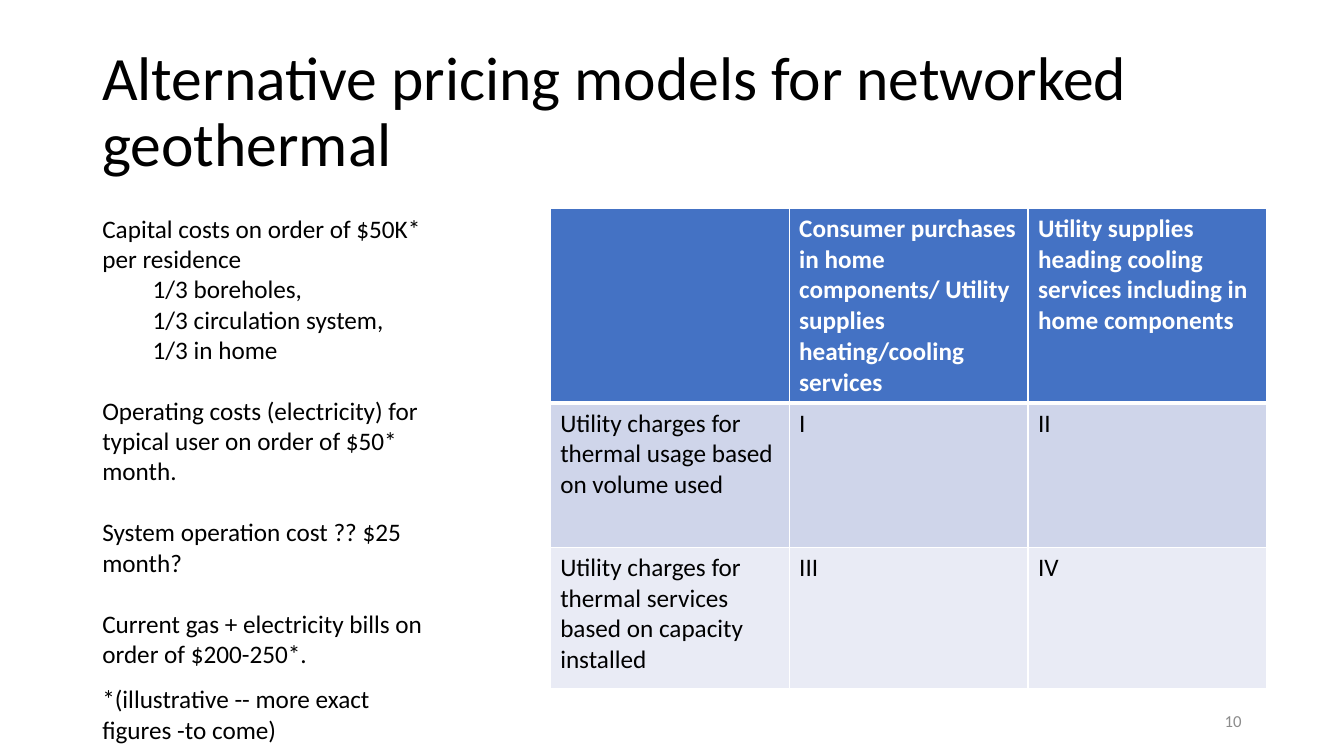
from dataclasses import dataclass

from lxml.etree import SubElement
from pptx import Presentation
from pptx.dml.color import RGBColor
from pptx.enum.text import MSO_ANCHOR as Anchor, PP_ALIGN as Align
from pptx.oxml.ns import qn
from pptx.util import Emu, Pt

COLUMNS, ROWS = 160, 90
MODULE = 76200
FONT = "Calibri"
BLACK, WHITE, GREY = "000000", "FFFFFF", "8C8C8C"
ROW_FILLS = ("4472C4", "CFD5EA", "E9EBF5")
ROW_HEIGHTS = (22, 17.2, 16.8)
COLUMN_WIDTH = 28.45
THIN, THICK = 1, 3
BLANK_LINE = 22


@dataclass(frozen=True)
class Line:
    """One paragraph, with its indent in columns and space before in points."""
    text: str
    indent: float = 0
    before: float = 0


@dataclass(frozen=True)
class TextBlock:
    """A text box placed on the slide grid."""
    left: float
    top: float
    width: float
    height: float
    lines: tuple[Line, ...]
    size: float = 18
    color: str = BLACK
    anchor: Anchor = Anchor.TOP
    align: Align = Align.LEFT
    spacing: float = 1.0


TEXT_BLOCKS = (
    TextBlock(11, 4.8, 138, 17.4,
              (Line("Alternative pricing models for networked geothermal"),),
              size=44, anchor=Anchor.MIDDLE, spacing=0.9),
    TextBlock(11, 24.8, 43.8, 55.7, (
        Line("Capital costs on order of $50K* per residence"),
        Line("1/3 boreholes,", indent=6),
        Line("1/3 circulation system,", indent=6),
        Line("1/3 in home", indent=6),
        Line("Operating costs (electricity) for typical user on order of $50* month.",
             before=BLANK_LINE),
        Line("System operation cost ?? $25 month?", before=BLANK_LINE),
        Line("Current gas + electricity bills on order of $200-250*.", before=BLANK_LINE),
    )),
    TextBlock(11, 80.8, 40.9, 8.5,
              (Line("*(illustrative -- more exact figures -to come)"),)),
    TextBlock(113, 83.4, 36, 4.8, (Line("10"),), size=12, color=GREY,
              anchor=Anchor.MIDDLE, align=Align.RIGHT),
)

PRICING_MODELS = (
    ((),
     ("Consumer purchases in home components/ Utility supplies heating/cooling services",),
     ("Utility supplies heading cooling services including in home components",)),
    (("Utility charges for thermal usage based on volume used",), ("I",), ("II",)),
    (("Utility charges for thermal services based on capacity", "installed"),
     ("III",), ("IV",)),
)


def grid(count: float) -> Emu:
    """Turn a count of grid modules into a length."""
    return Emu(round(count * MODULE))


def rgb(color: str) -> RGBColor:
    """Turn a hex string into a colour."""
    return RGBColor.from_string(color)


def add_span(para, text: str, size: float, color: str, bold: bool = False) -> None:
    """Add one formatted run to a paragraph."""
    span = para.add_run()
    span.text = text
    span.font.name = FONT
    span.font.size = Pt(size)
    span.font.bold = bold
    span.font.color.rgb = rgb(color)


def next_para(frame, index: int):
    """Return the first paragraph of a frame, or a new one after it."""
    return frame.add_paragraph() if index else frame.paragraphs[0]


def draw_text(page, block: TextBlock) -> None:
    """Draw a text block on the page."""
    box = page.shapes.add_textbox(grid(block.left), grid(block.top),
                                  grid(block.width), grid(block.height))
    frame = box.text_frame
    frame.word_wrap = True
    frame.vertical_anchor = block.anchor
    for index, line in enumerate(block.lines):
        para = next_para(frame, index)
        para.alignment = block.align
        para.line_spacing = block.spacing
        para.space_before = Pt(line.before)
        if line.indent:
            para.level = 1
            properties = para._p.get_or_add_pPr()
            properties.set("marL", str(grid(line.indent)))
            properties.set("indent", "0")
        add_span(para, line.text, block.size, block.color)


def draw_borders(cell, top: float, bottom: float) -> None:
    """Give a cell white borders, placed ahead of its fill."""
    properties = cell._tc.get_or_add_tcPr()
    sides = {"a:lnL": THIN, "a:lnR": THIN, "a:lnT": top, "a:lnB": bottom}
    for index, (tag, width) in enumerate(sides.items()):
        border = SubElement(properties, qn(tag), w=str(Pt(width)))
        fill = SubElement(border, qn("a:solidFill"))
        SubElement(fill, qn("a:srgbClr"), val=WHITE)
        properties.insert(index, border)


def draw_table(page) -> None:
    """Draw the matrix of pricing models."""
    count = len(PRICING_MODELS[0])
    table = page.shapes.add_table(
        len(PRICING_MODELS), count, grid(65.5), grid(24.8),
        grid(COLUMN_WIDTH * count), grid(sum(ROW_HEIGHTS))).table
    table.horz_banding = False
    for column in table.columns:
        column.width = grid(COLUMN_WIDTH)
    for row, texts in enumerate(PRICING_MODELS):
        table.rows[row].height = grid(ROW_HEIGHTS[row])
        header = row == 0
        for column, paragraphs in enumerate(texts):
            cell = table.cell(row, column)
            cell.fill.solid()
            cell.fill.fore_color.rgb = rgb(ROW_FILLS[row])
            draw_borders(cell, THICK if row == 1 else THIN, THICK if header else THIN)
            for index, text in enumerate(paragraphs):
                para = next_para(cell.text_frame, index)
                add_span(para, text, 18, WHITE if header else BLACK, header)


def main() -> None:
    """Build the slide and save the deck."""
    deck = Presentation()
    deck.slide_width, deck.slide_height = grid(COLUMNS), grid(ROWS)
    page = deck.slides.add_slide(deck.slide_layouts[6])
    draw_table(page)
    for block in TEXT_BLOCKS:
        draw_text(page, block)
    deck.save("out.pptx")


if __name__ == "__main__":
    main()
